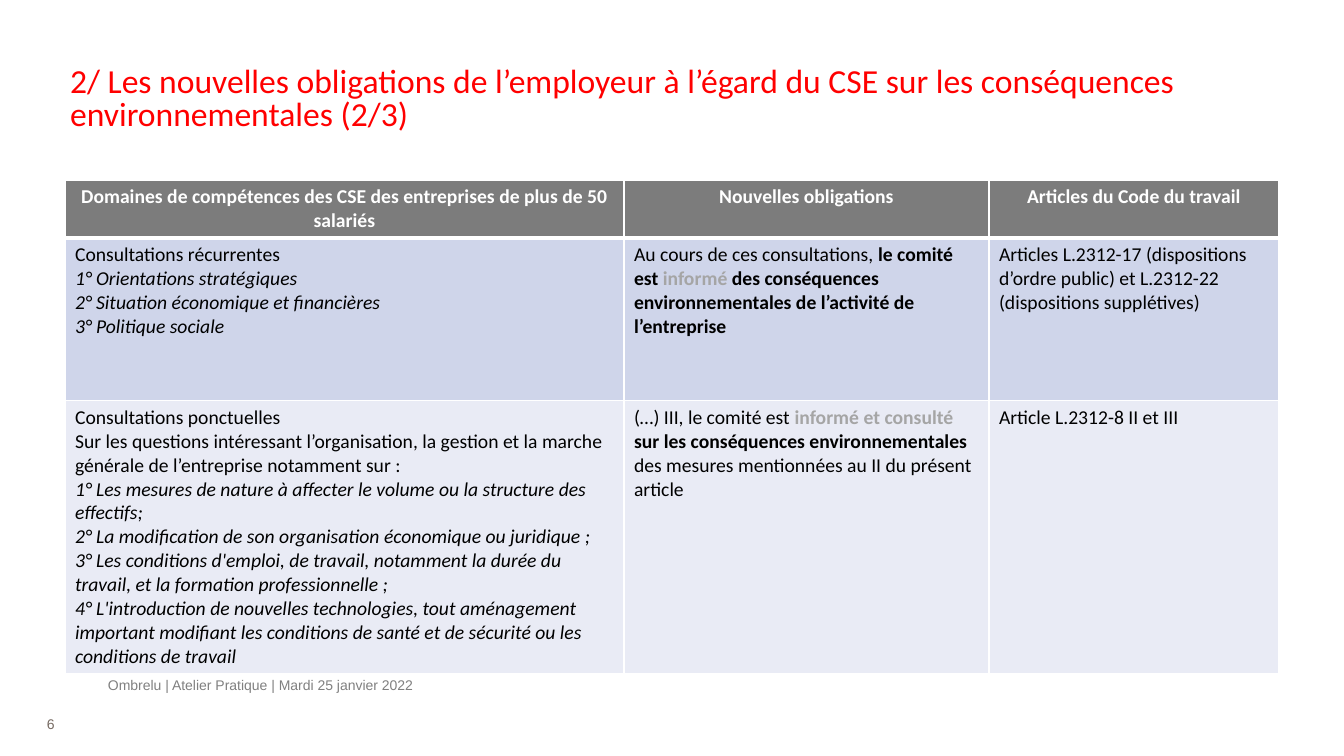
from dataclasses import dataclass

from lxml.etree import SubElement
from pptx import Presentation
from pptx.dml.color import RGBColor
from pptx.enum.text import MSO_ANCHOR, MSO_AUTO_SIZE, PP_ALIGN
from pptx.oxml.ns import qn
from pptx.util import Emu, Pt

EMU_PER_INCH, PX_PER_INCH = 914400, 100.8
WHITE, BLACK, RED, GREY = "FFFFFF", "000000", "FF0000", "A5A5A5"


@dataclass(frozen=True)
class Span:
    text: str
    bold: bool = False
    color: str = BLACK


@dataclass(frozen=True)
class Para:
    spans: tuple[Span, ...]
    italic: bool = False
    align: PP_ALIGN = PP_ALIGN.LEFT


@dataclass(frozen=True)
class Row:
    height: int
    fill: str
    top_border: int
    bottom_border: int
    cells: tuple[tuple[Para, ...], ...]


@dataclass(frozen=True)
class Label:
    text: str
    box: tuple[int, int, int, int]
    color: str


def px(n: int) -> Emu:
    return Emu(round(n * EMU_PER_INCH / PX_PER_INCH))


def rgb(color: str) -> RGBColor:
    return RGBColor.from_string(color)


def plain(text: str, italic: bool = False) -> Para:
    return Para((Span(text),), italic)


def header(text: str) -> tuple[Para, ...]:
    return (Para((Span(text, True, WHITE),), align=PP_ALIGN.CENTER),)


def set_font(font, name: str, size: int, color: str) -> None:
    font.name, font.size = name, Pt(size)
    font.color.rgb = rgb(color)


def place(shape, box: tuple[int, int, int, int]) -> None:
    shape.left, shape.top, shape.width, shape.height = map(px, box)


def set_borders(cell, top: int, bottom: int) -> None:
    tc_pr = cell._tc.get_or_add_tcPr()
    for side, width in (("L", 1), ("R", 1), ("T", top), ("B", bottom)):
        ln = SubElement(tc_pr, qn(f"a:ln{side}"), w=str(Pt(width)))
        fill = SubElement(ln, qn("a:solidFill"))
        SubElement(fill, qn("a:srgbClr"), val=WHITE)


def fill_cell(cell, paras: tuple[Para, ...], row: Row) -> None:
    set_borders(cell, row.top_border, row.bottom_border)
    cell.fill.solid()
    cell.fill.fore_color.rgb = rgb(row.fill)
    tf = cell.text_frame
    for i, para in enumerate(paras):
        p = tf.add_paragraph() if i else tf.paragraphs[0]
        p.alignment = para.align
        p.font.name, p.font.size = "Calibri", Pt(14)
        p.font.italic = para.italic
        for span in para.spans:
            r = p.add_run()
            r.text = span.text
            r.font.bold = span.bold
            r.font.color.rgb = rgb(span.color)


def add_label(s, label: Label) -> None:
    tf = s.shapes.add_textbox(*map(px, label.box)).text_frame
    tf.word_wrap = True
    tf.margin_left = tf.margin_right = tf.margin_top = tf.margin_bottom = 0
    p = tf.paragraphs[0]
    p.text = label.text
    set_font(p.font, "Arial", 10, label.color)


TITLE = ("2/ Les nouvelles obligations de l’employeur à l’égard du CSE "
         "sur les conséquences environnementales (2/3)")
COLUMNS = (559, 365, 290)
ROWS = (
    Row(57, "7C7C7C", 1, 3, (
        header("Domaines de compétences des CSE des entreprises de plus de 50 salariés"),
        header("Nouvelles obligations"),
        header("Articles du Code du travail"),
    )),
    Row(163, "CFD5EA", 3, 1, (
        (
            plain("Consultations récurrentes"),
            plain("1° Orientations stratégiques", True),
            plain("2° Situation économique et financières", True),
            plain("3° Politique sociale", True),
        ),
        (Para((
            Span("Au cours de ces consultations, "),
            Span("le comité est ", True),
            Span("informé", True, GREY),
            Span(" des conséquences environnementales de l’activité de l’entreprise", True),
        )),),
        (plain("Articles L.2312-17 (dispositions d’ordre public) et L.2312-22 "
               "(dispositions supplétives)"),),
    )),
    Row(273, "E9EBF5", 1, 1, (
        (
            plain("Consultations ponctuelles"),
            plain("Sur les questions intéressant l’organisation, la gestion et la marche "
                  "générale de l’entreprise notamment sur :"),
            plain("1° Les mesures de nature à affecter le volume ou la structure des "
                  "effectifs;", True),
            plain("2° La modification de son organisation économique ou juridique ;", True),
            plain("3° Les conditions d'emploi, de travail, notamment la durée du travail, "
                  "et la formation professionnelle ;", True),
            plain("4° L'introduction de nouvelles technologies, tout aménagement important "
                  "modifiant les conditions de santé et de sécurité ou les conditions de "
                  "travail", True),
        ),
        (Para((
            Span("(…) III, le comité est "),
            Span("informé et consulté ", True, GREY),
            Span("sur les conséquences environnementales ", True),
            Span("des mesures mentionnées au II du présent article"),
        )),),
        (plain("Article L.2312-8 II et III"),),
    )),
)
LABELS = (
    Label("6", (47, 716, 35, 28), "766A62"),
    Label("Ombrelu | Atelier Pratique | Mardi 25 janvier 2022", (108, 677, 559, 28), "808080"),
)


def main() -> None:
    prs = Presentation()
    prs.slide_width, prs.slide_height = px(1344), px(756)
    s = prs.slides.add_slide(prs.slide_layouts[5])

    # Title
    title = s.shapes.title
    place(title, (60, 60, 1215, 80))
    tf = title.text_frame
    tf.word_wrap, tf.auto_size = True, MSO_AUTO_SIZE.NONE
    tf.vertical_anchor = MSO_ANCHOR.MIDDLE
    p = tf.paragraphs[0]
    p.text = TITLE
    p.alignment, p.line_spacing = PP_ALIGN.LEFT, Pt(24)
    set_font(p.font, "Calibri", 24, RED)

    # Table of obligations
    height = sum(row.height for row in ROWS)
    table = s.shapes.add_table(len(ROWS), len(COLUMNS), px(65), px(180),
                               px(sum(COLUMNS)), px(height)).table
    for column, width in zip(table.columns, COLUMNS):
        column.width = px(width)
    for i, row in enumerate(ROWS):
        table.rows[i].height = px(row.height)
        for j, paras in enumerate(row.cells):
            fill_cell(table.cell(i, j), paras, row)

    # Page number and footer
    for label in LABELS:
        add_label(s, label)

    prs.save("out.pptx")


if __name__ == "__main__":
    main()
